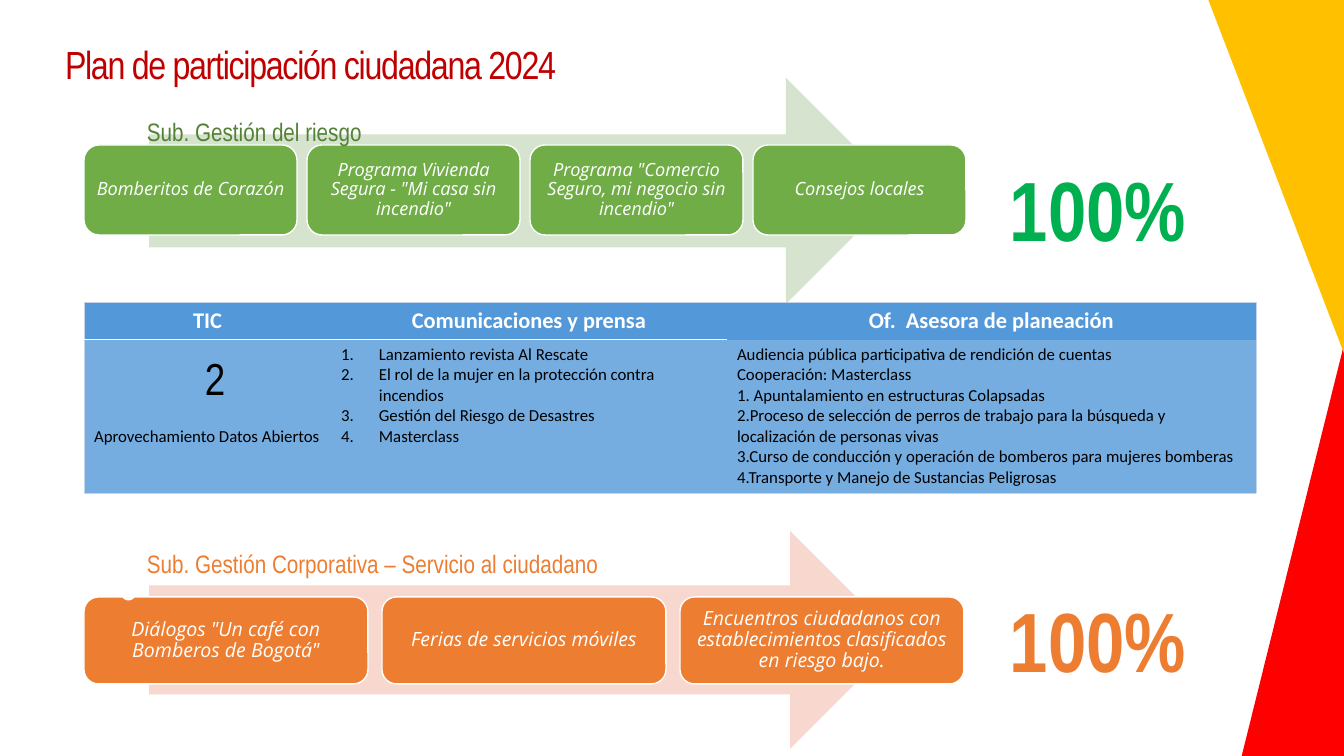
from lxml.etree import SubElement
from pptx import Presentation
from pptx.dml.color import RGBColor
from pptx.enum.shapes import MSO_SHAPE
from pptx.enum.text import MSO_ANCHOR, PP_ALIGN
from pptx.oxml.ns import qn
from pptx.util import Pt

EMU_PER_PX = 914400 / 100.8
WHITE = RGBColor(0xFF, 0xFF, 0xFF)
BLACK = RGBColor(0x00, 0x00, 0x00)
RED = RGBColor(0xFF, 0x00, 0x00)
YELLOW = RGBColor(0xFF, 0xC0, 0x00)
DARK_RED = RGBColor(0xC0, 0x00, 0x00)
GREEN = RGBColor(0x70, 0xAD, 0x47)
PALE_GREEN = RGBColor(0xD5, 0xE3, 0xCF)
DARK_GREEN = RGBColor(0x53, 0x81, 0x35)
BRIGHT_GREEN = RGBColor(0x00, 0xB0, 0x50)
ORANGE = RGBColor(0xED, 0x7D, 0x31)
PALE_ORANGE = RGBColor(0xF8, 0xD7, 0xCE)
HEADER_BLUE = RGBColor(0x53, 0x98, 0xD9)
BODY_BLUE = RGBColor(0x75, 0xAD, 0xE1)
BORDER_BLUE = RGBColor(0xC4, 0xD5, 0xEB)


def px(*lengths):
    return [round(length * EMU_PER_PX) for length in lengths]


def write(paragraph, text, color, **font_format):
    """Add one run to the paragraph and return it."""
    run = paragraph.add_run()
    run.text = text
    run.font.color.rgb = color
    for attribute, value in font_format.items():
        setattr(run.font, attribute, value)
    return run


prs = Presentation()
prs.slide_width, prs.slide_height = px(1344, 756)
slide = prs.slides.add_slide(prs.slide_layouts[6])
shapes = slide.shapes

# Side triangles
lower = shapes.add_shape(MSO_SHAPE.RIGHT_TRIANGLE, *px(1207, 345, 137, 551))
lower._element.spPr.xfrm.set("flipH", "1")
upper = shapes.add_shape(MSO_SHAPE.RIGHT_TRIANGLE, *px(1208, -1, 137, 357))
upper.rotation = 180
for triangle, color in ((lower, RED), (upper, YELLOW)):
    triangle.shadow.inherit = False
    triangle.fill.solid()
    triangle.fill.fore_color.rgb = color
    triangle.line.fill.background()

# Programme arrows: place, colours, row of boxes
programmes = [
    ((149, 78, 750, 226), PALE_GREEN, GREEN, (145, 213, 90), 223, 13, 5,
     ["Bomberitos de Corazón",
      'Programa Vivienda Segura - "Mi casa sin incendio"',
      'Programa "Comercio Seguro, mi negocio sin incendio"',
      "Consejos locales"]),
    ((149, 531, 750, 218), PALE_ORANGE, ORANGE, (597, 284, 87), 298, 14, 6,
     ['Diálogos "Un café con Bomberos de Bogotá"',
      "Ferias de servicios móviles",
      "Encuentros ciudadanos con establecimientos clasificados en riesgo bajo."]),
]
for place, pale, strong, (top, width, height), pitch, size, inset, activities in programmes:
    arrow = shapes.add_shape(MSO_SHAPE.RIGHT_ARROW, *px(*place))
    arrow.shadow.inherit = False
    arrow.fill.solid()
    arrow.fill.fore_color.rgb = pale
    arrow.line.fill.background()
    for index, activity in enumerate(activities):
        box = shapes.add_shape(MSO_SHAPE.ROUNDED_RECTANGLE,
                               *px(84 + index * pitch, top, width, height))
        box.shadow.inherit = False
        box.fill.solid()
        box.fill.fore_color.rgb = strong
        box.line.color.rgb = WHITE
        box.line.width = Pt(1)
        frame = box.text_frame
        frame.word_wrap = True
        frame.vertical_anchor = MSO_ANCHOR.MIDDLE
        for side in ("left", "top", "right", "bottom"):
            setattr(frame, f"margin_{side}", px(inset)[0])
        paragraph = frame.paragraphs[0]
        paragraph.alignment = PP_ALIGN.CENTER
        paragraph.line_spacing = 0.9
        write(paragraph, activity, WHITE, name="Open Sans", size=Pt(size), italic=True)

# Table of areas
headers = ["TIC", "Comunicaciones y prensa", "Of.  Asesora de planeación"]
bodies = [
    ["Aprovechamiento Datos Abiertos"],
    ["Lanzamiento revista Al Rescate",
     "El rol de la mujer en la protección contra incendios",
     "Gestión del Riesgo de Desastres",
     "Masterclass"],
    ["Audiencia pública participativa de rendición de cuentas",
     "Cooperación: Masterclass",
     "1. Apuntalamiento en estructuras Colapsadas",
     "2.Proceso de selección de perros de trabajo para la búsqueda y "
     "localización de personas vivas",
     "3.Curso de conducción y operación de bomberos para mujeres bomberas "
     "4.Transporte y Manejo de Sustancias Peligrosas"],
]
areas = shapes.add_table(2, 3, *px(84, 302, 1172, 188)).table
areas._tbl.tblPr.find(qn("a:tableStyleId")).text = "{2D5ABB26-0587-4C30-8999-92F81FD0307C}"
areas.horz_banding = False
for column, width in zip(areas.columns, px(247, 396, 529)):
    column.width = width
for row, height in zip(areas.rows, px(37, 151)):
    row.height = height

thin = (BORDER_BLUE, 0.5)
for row in range(2):
    for column in range(3):
        cell = areas.cell(row, column)
        borders = {
            "a:lnL": thin if column == 0 else None,
            "a:lnR": thin if column == 2 else None,
            "a:lnT": thin if row == 0 else None,
            "a:lnB": thin if row == 1 else (WHITE, 1.5) if column < 2 else None,
        }
        for tag, border in borders.items():
            if border:
                color, points = border
                edge = SubElement(cell._tc.get_or_add_tcPr(), qn(tag), w=str(Pt(points)))
                SubElement(SubElement(edge, qn("a:solidFill")), qn("a:srgbClr"), val=str(color))
        cell.fill.solid()
        cell.fill.fore_color.rgb = BODY_BLUE if row else HEADER_BLUE
        frame = cell.text_frame
        for index, line in enumerate(bodies[column] if row else [headers[column]]):
            paragraph = frame.add_paragraph() if index else frame.paragraphs[0]
            if row == 0:
                paragraph.alignment = PP_ALIGN.CENTER
                write(paragraph, line, WHITE, name="Calibri", size=Pt(16), bold=True)
                continue
            if column == 1:
                properties = paragraph._p.get_or_add_pPr()
                properties.set("marL", "342900")
                properties.set("indent", "-342900")
                SubElement(properties, qn("a:buFont"), typeface="+mj-lt")
                SubElement(properties, qn("a:buAutoNum"), type="arabicPeriod")
            write(paragraph, line, BLACK, name="Calibri", size=Pt(12), bold=False)
areas.cell(1, 0).margin_top = px(87)[0]

# Title, headings and figures
labels = [
    ((57, 17, 1154, 94), "Plan de participación ciudadana 2024", 28, DARK_RED, False),
    ((1000, 153, 212, 112), "100%", 60, BRIGHT_GREEN, True),
    ((137, 111, 266, 40), "Sub. Gestión del riesgo", 18, DARK_GREEN, False),
    ((1000, 584, 212, 112), "100%", 60, ORANGE, True),
    ((137, 543, 565, 40), "Sub. Gestión Corporativa – Servicio al ciudadano", 18, ORANGE, False),
    ((108, 551, 202, 65), "6", 32, WHITE, False),
    ((195, 346, 30, 65), "2", 32, BLACK, False),
]
for place, text, size, color, bold in labels:
    frame = shapes.add_textbox(*px(*place)).text_frame
    frame.word_wrap = True
    run = write(frame.paragraphs[0], text, color, name="Arial Narrow", size=Pt(size), bold=bold)
    if size == 28:
        frame.vertical_anchor = MSO_ANCHOR.MIDDLE
        frame.margin_left, frame.margin_right = px(8, 8)
        run.font._element.set("spc", "-90")

prs.save("out.pptx")
